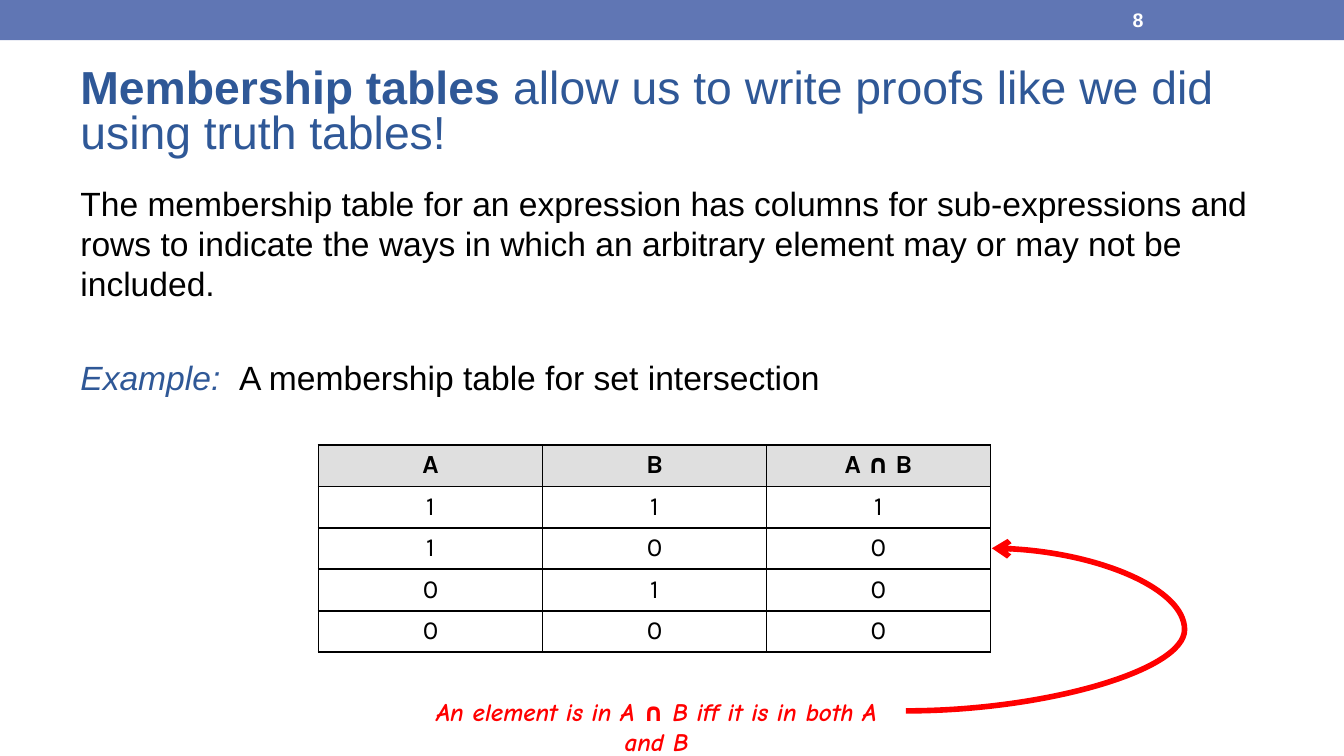
from dataclasses import dataclass, field

from lxml import etree
from pptx import Presentation
from pptx.dml.color import RGBColor
from pptx.enum.shapes import MSO_CONNECTOR as CONN, MSO_SHAPE as SHAPE
from pptx.enum.text import MSO_ANCHOR as ANCHOR, PP_ALIGN as ALIGN
from pptx.oxml.ns import qn
from pptx.util import Inches, Pt

COLORS = {
    "bar": "6076B4",
    "blue": "2F5897",
    "black": "000000",
    "white": "FFFFFF",
    "red": "FF0000",
    "header": "DFDFDF",
}


@dataclass
class Run:
    text: str
    color: str = "black"
    fmt: dict = field(default_factory=dict)


@dataclass
class Para:
    runs: list[Run]
    fmt: dict = field(default_factory=dict)


@dataclass
class TextBox:
    box: tuple[float, float, float, float]
    paras: list[Para]
    font: dict
    anchor: ANCHOR = ANCHOR.TOP


def rgb(name: str) -> RGBColor:
    return RGBColor.from_string(COLORS[name])


def set_attrs(obj, values: dict) -> None:
    for key, value in values.items():
        setattr(obj, key, value)


def fill_para(p, para: Para, font: dict) -> None:
    set_attrs(p, para.fmt)
    for run in para.runs:
        r = p.add_run()
        r.text = run.text
        set_attrs(r.font, font | run.fmt)
        r.font.color.rgb = rgb(run.color)


def draw_text(slide, item: TextBox) -> None:
    tf = slide.shapes.add_textbox(*map(Inches, item.box)).text_frame
    set_attrs(tf, {"word_wrap": True, "vertical_anchor": item.anchor})
    for i, para in enumerate(item.paras):
        p = tf.add_paragraph() if i else tf.paragraphs[0]
        fill_para(p, para, item.font)


def border_cell(cell) -> None:
    tc_pr = cell._tc.get_or_add_tcPr()
    for i, side in enumerate(("lnL", "lnR", "lnT", "lnB")):
        ln = etree.Element(qn(f"a:{side}"), w=str(Pt(1)))
        solid = etree.SubElement(ln, qn("a:solidFill"))
        etree.SubElement(solid, qn("a:srgbClr"), val=COLORS["black"])
        tc_pr.insert(i, ln)


def draw_table(slide, rows: list[str], left: float, top: float,
               width: float, row_h: float) -> None:
    cells = [row.split("|") for row in rows]
    n_cols = len(cells[0])
    table = slide.shapes.add_table(
        len(cells), n_cols, Inches(left), Inches(top),
        Inches(width), Inches(row_h * len(cells))).table
    margins = {"margin_left": Inches(0.07), "margin_right": Inches(0.07),
               "margin_top": Pt(2.7), "margin_bottom": Pt(2.7)}
    for i, row in enumerate(cells):
        table.rows[i].height = Inches(row_h)
        for j, text in enumerate(row):
            cell = table.cell(i, j)
            set_attrs(cell, margins)
            if i == 0:
                cell.fill.solid()
                cell.fill.fore_color.rgb = rgb("header")
            else:
                cell.fill.background()
            border_cell(cell)
            font = {"name": "Karla", "size": Pt(14), "bold": i == 0}
            fill_para(cell.text_frame.paragraphs[0],
                      Para([Run(text)], {"alignment": ALIGN.CENTER}), font)


def draw_curved_arrow(slide, start: tuple[float, float],
                      end: tuple[float, float], bend: float) -> None:
    sp = slide.shapes.add_connector(CONN.CURVE, *map(Inches, start + end))
    sp.line.width = Pt(3)
    sp.line.color.rgb = rgb("red")
    sp_pr = sp._element.spPr
    # How far the curve swings out, as a share of its width
    guides = sp_pr.find(qn("a:prstGeom")).get_or_add_avLst()
    etree.SubElement(guides, qn("a:gd"), name="adj1",
                     fmla=f"val {round(bend * 100000)}")
    etree.SubElement(sp.line._get_or_add_ln(), qn("a:tailEnd"), type="arrow")
    etree.SubElement(sp_pr, qn("a:effectLst"))


def main() -> None:
    prs = Presentation()
    # Widescreen, 16:9
    prs.slide_width = Inches(10)
    prs.slide_height = prs.slide_width * 9 // 16
    slide = prs.slides.add_slide(prs.slide_layouts[6])

    # Top bar
    bar = slide.shapes.add_shape(SHAPE.RECTANGLE, 0, 0, Inches(10), Inches(0.3))
    bar.shadow.inherit = False
    bar.fill.solid()
    bar.fill.fore_color.rgb = rgb("bar")
    bar.line.fill.background()

    # Body text
    draw_text(slide, TextBox(
        (0.5, 1.31, 9, 4),
        [Para([Run("The membership table for an expression has columns for "
                   "sub-expressions and rows to indicate the ways in which an "
                   "arbitrary element may or may not be included.")],
              {"space_before": Pt(3.6)}),
         Para([Run("Example:  ", "blue", {"italic": True}),
               Run("A membership table for set intersection")],
              {"space_before": Pt(28.8)})],
        {"name": "Arial", "size": Pt(18)}))

    # Membership table
    draw_table(slide, ["A|B|A ∩ B", "1|1|1", "1|0|0", "0|1|0", "0|0|0"],
               2.37, 3.31, 5, 0.3)

    # Caption and its arrow
    draw_text(slide, TextBox(
        (3.03, 5.13, 3.71, 0.33),
        [Para([Run("An element is in A ∩ B iff it is in both A and B", "red")],
              {"alignment": ALIGN.CENTER})],
        {"name": "Comic Neue", "size": Pt(13.5), "bold": True, "italic": True}))
    draw_curved_arrow(slide, (6.74, 5.29), (7.38, 4.08), 3.24)

    # Slide number
    draw_text(slide, TextBox(
        (8.33, 0.01, 1.17, 0.27), [Para([Run("8", "white")])],
        {"name": "Arial", "size": Pt(10.5), "bold": True}, ANCHOR.MIDDLE))

    # Title
    draw_text(slide, TextBox(
        (0.5, 0.44, 9, 0.81),
        [Para([Run("Membership tables", "blue", {"bold": True}),
               Run(" allow us to write proofs like we did using truth tables!",
                   "blue")],
              {"line_spacing": 0.8})],
        {"name": "Arial", "size": Pt(24.8), "bold": False}, ANCHOR.MIDDLE))

    prs.save("out.pptx")


if __name__ == "__main__":
    main()
